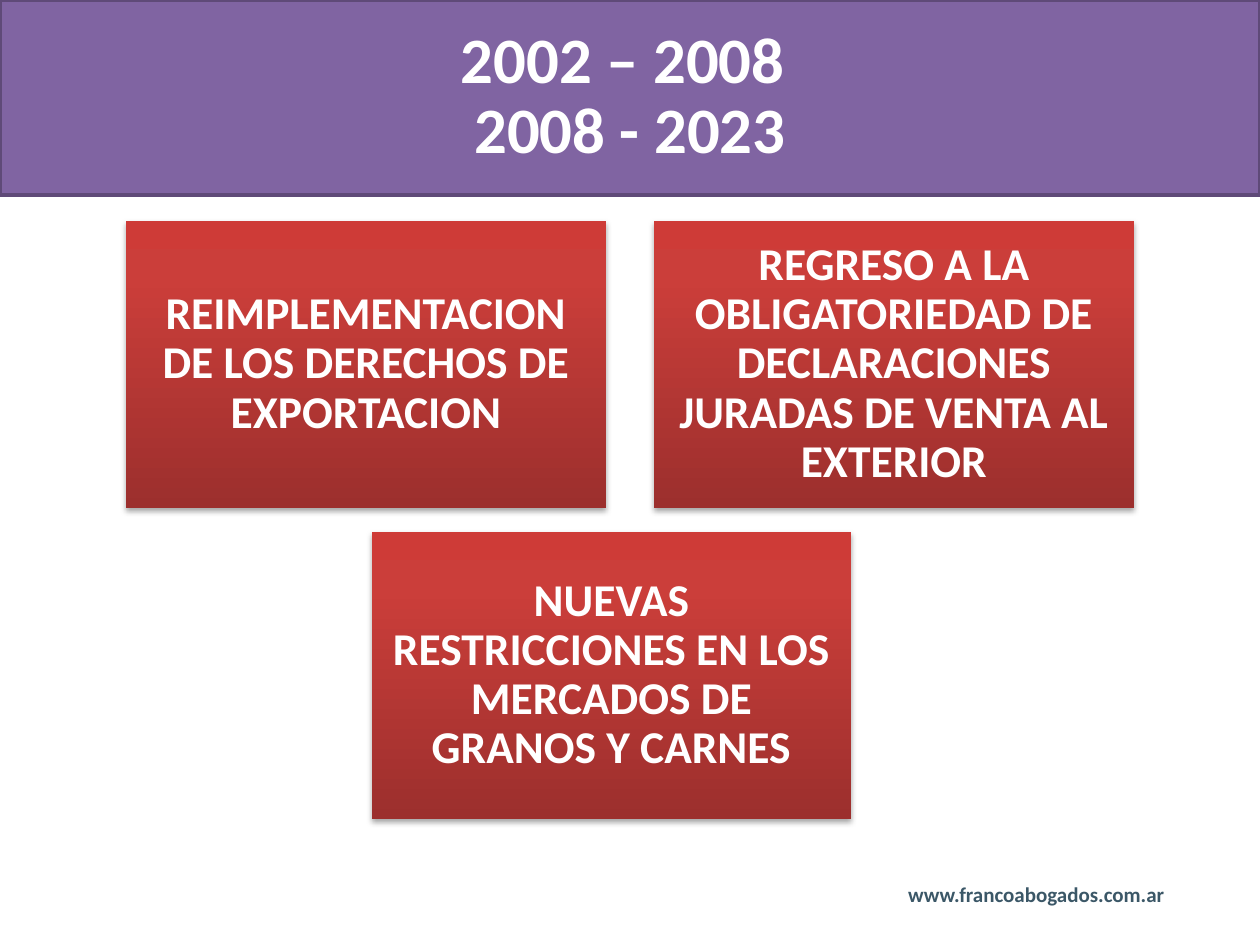
import copy

import lxml.etree
import pptx
import pptx.dml.color
import pptx.enum.shapes
import pptx.enum.text
import pptx.oxml
import pptx.oxml.ns
import pptx.util

Inches, Pt = pptx.util.Inches, pptx.util.Pt
RECTANGLE = pptx.enum.shapes.MSO_SHAPE.RECTANGLE
CENTER = pptx.enum.text.PP_ALIGN.CENTER
MIDDLE = pptx.enum.text.MSO_ANCHOR.MIDDLE
qn = pptx.oxml.ns.qn


def color(hex_string):
    return pptx.dml.color.RGBColor.from_string(hex_string)


def write(shape, text, frame_format, paragraph_format, size, text_color):
    frame = shape.text_frame
    frame.text = text
    paragraph = frame.paragraphs[0]
    font_format = {"name": "Calibri", "size": Pt(size), "bold": True}
    for target, values in (
        (frame, frame_format),
        (paragraph, paragraph_format),
        (paragraph.font, font_format),
    ):
        for name, value in values.items():
            setattr(target, name, value)
    paragraph.font.color.rgb = color(text_color)


presentation = pptx.Presentation()
presentation.slide_width, presentation.slide_height = Inches(10), Inches(7.5)
slide = presentation.slides.add_slide(presentation.slide_layouts[6])
shapes = slide.shapes

centered = {"alignment": CENTER, "line_spacing": 0.9}
middle = {"word_wrap": True, "vertical_anchor": MIDDLE}

# Web address at the foot
footer = shapes.add_textbox(Inches(7.11), Inches(6.95), Inches(2.38), Inches(0.3))
write(footer, "www.francoabogados.com.ar", {"word_wrap": True}, {}, 12, "3B5767")

# Title band across the full width
band = shapes.add_shape(RECTANGLE, 0, 0, presentation.slide_width, Inches(1.55))
band.shadow.inherit = False
band.fill.solid()
band.fill.fore_color.rgb = color("8064A2")
band.line.color.rgb = color("5F4A78")
band.line.width = Pt(2)
write(band, "2002 – 2008 \v2008 - 2023", middle, centered, 37, "FFFFFF")

# Card grid: two columns above, one card between them below
left, top = 1, 1.75
width, height = 3.81, 2.28
column_step, row_step = width + 0.38, height + 0.19
cards = [
    (0, 0, "REIMPLEMENTACION DE LOS DERECHOS DE EXPORTACION"),
    (1, 0, "REGRESO A LA OBLIGATORIEDAD DE DECLARACIONES JURADAS DE VENTA AL EXTERIOR"),
    (0.465, 1, "NUEVAS RESTRICCIONES EN LOS MERCADOS DE GRANOS Y CARNES"),
]
gradient = [(0, "9C2F2D"), (0.8, "CB3E3A"), (1, "CE3B37")]
sides = ("left", "top", "right", "bottom")
card_frame = middle | {f"margin_{side}": Inches(0.11) for side in sides}

for column, row, text in cards:
    card = shapes.add_shape(
        RECTANGLE,
        Inches(left + column * column_step),
        Inches(top + row * row_step),
        Inches(width),
        Inches(height),
    )
    card.line.fill.background()

    # Three-stop gradient, dark at the bottom
    card.fill.gradient()
    card.fill.gradient_angle = 90
    properties = card._element.spPr
    stop_list = properties.find(".//" + qn("a:gsLst"))
    stop_list.insert(1, copy.deepcopy(stop_list[0]))
    for stop, (position, stop_color) in zip(card.fill.gradient_stops, gradient):
        stop.position = position
        stop.color.rgb = color(stop_color)

    # Soft shadow falling straight down
    card.shadow.inherit = False
    shadow = lxml.etree.SubElement(
        properties.find(qn("a:effectLst")),
        qn("a:outerShdw"),
        blurRad=str(Pt(3.1)),
        dist=str(Pt(1.8)),
        dir="5400000",
        rotWithShape="0",
    )
    shade = lxml.etree.SubElement(shadow, qn("a:srgbClr"), val="000000")
    lxml.etree.SubElement(shade, qn("a:alpha"), val="35000")

    write(card, text, card_frame, centered, 26, "FFFFFF")

presentation.save("out.pptx")
